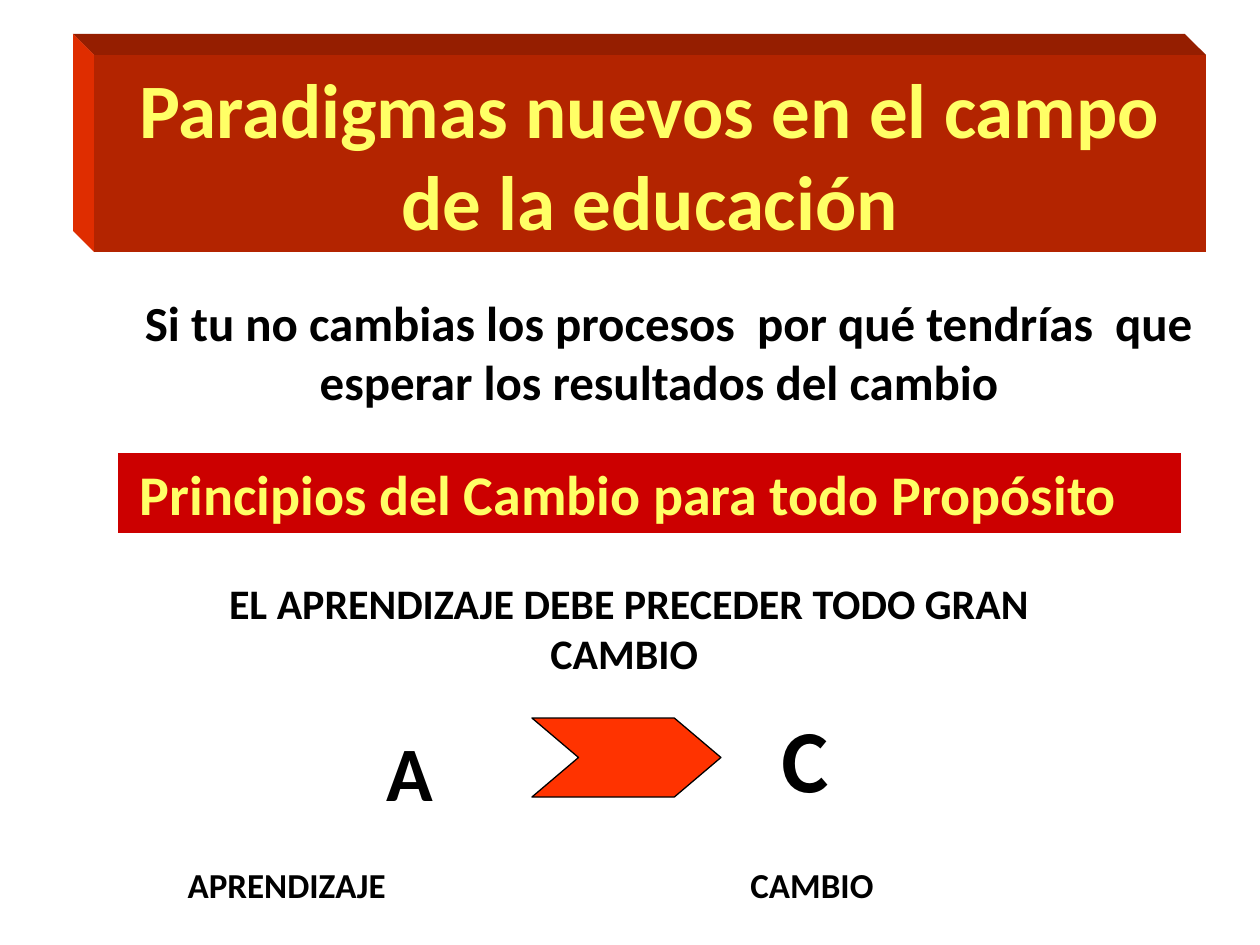
from pptx import Presentation
from pptx.dml.color import RGBColor
from pptx.enum.shapes import MSO_SHAPE
from pptx.enum.text import PP_ALIGN
from pptx.util import Pt

SCALE = 914400 / 126
RECTANGLE = MSO_SHAPE.RECTANGLE
CHEVRON = MSO_SHAPE.CHEVRON
LEFT = PP_ALIGN.LEFT
CENTER = PP_ALIGN.CENTER

BLACK = RGBColor(0x00, 0x00, 0x00)
YELLOW = RGBColor(0xFF, 0xFF, 0x66)
ORANGE = RGBColor(0xFF, 0x33, 0x00)
CRIMSON = RGBColor(0xCC, 0x00, 0x00)
FRONT_FACE = RGBColor(0xB3, 0x24, 0x00)
TOP_FACE = RGBColor(0x95, 0x1E, 0x00)
SIDE_FACE = RGBColor(0xDF, 0x2D, 0x00)


def px(length):
    return round(length * SCALE)


class SlideBuilder:
    font = "Calibri"

    def __init__(self, page):
        self.page = page

    def paint(self, shape, fill, line=None):
        shape.shadow.inherit = False
        shape.fill.solid()
        shape.fill.fore_color.rgb = fill
        if line is None:
            shape.line.fill.background()
        else:
            shape.line.color.rgb = line
            shape.line.width = Pt(0.75)
        return shape

    def shape(self, kind, left, top, width, height, fill, line=None):
        shape = self.page.shapes.add_shape(
            kind, px(left), px(top), px(width), px(height))
        return self.paint(shape, fill, line)

    def face(self, points, fill):
        start, *others = points
        builder = self.page.shapes.build_freeform(*start, scale=SCALE)
        builder.add_line_segments(others, close=True)
        return self.paint(builder.convert_to_shape(), fill)

    def add_spans(self, box, spans, align=LEFT, font=None):
        frame = box.text_frame
        frame.word_wrap = True
        para = frame.paragraphs[0]
        para.alignment = align
        for text, size, color in spans:
            span = para.add_run()
            span.text = text
            span.font.name = font or self.font
            span.font.size = Pt(size)
            span.font.bold = True
            span.font.color.rgb = color

    def text(self, left, top, width, height, spans, align=LEFT, font=None):
        box = self.page.shapes.add_textbox(
            px(left), px(top), px(width), px(height))
        self.add_spans(box, spans, align, font)

    def raised_banner(self, left, top, width, height, depth, spans):
        right, bottom = left + width, top + height
        corner = (left - depth, top - depth)
        self.face([corner, (right - depth, top - depth),
                   (right, top), (left, top)], TOP_FACE)
        self.face([corner, (left, top), (left, bottom),
                   (left - depth, bottom - depth)], SIDE_FACE)
        front = self.shape(RECTANGLE, left, top, width, height, FRONT_FACE)
        self.add_spans(front, spans, CENTER)


def main():
    deck = Presentation()
    deck.slide_width = px(1260)
    deck.slide_height = px(945)
    slide = SlideBuilder(deck.slides.add_slide(deck.slide_layouts[6]))

    slide.raised_banner(94, 55, 1112, 197, 21, [
        ("Paradigmas nuevos en el campo de la educación", 44, YELLOW)])
    slide.text(128, 286, 1081, 131, [
        ("Si tu no cambias los procesos  por qué tendrías  que "
         "esperar los resultados del cambio", 28, BLACK),
        ("  ", 24, BLACK)], CENTER)

    heading = slide.shape(RECTANGLE, 118, 453, 1063, 80, CRIMSON)
    slide.add_spans(heading, [
        (" ", 24, BLACK),
        ("Principios del Cambio para todo Propósito", 32, YELLOW)])
    slide.text(168, 571, 922, 113, [
        ("EL APRENDIZAJE DEBE PRECEDER TODO GRAN CAMBIO ", 24, BLACK)], CENTER)

    arrow = slide.shape(CHEVRON, 532, 718, 189, 79, ORANGE, BLACK)
    arrow.adjustments[0] = 0.59
    slide.text(767, 709, 98, 105, [("C", 44, BLACK)], font="Noto Sans CJK JP")
    slide.text(374, 718, 118, 106, [("A", 44, BLACK)])
    slide.text(168, 857, 348, 54, [
        (" ", 18, BLACK), ("APRENDIZAJE", 20, BLACK)])
    slide.text(738, 857, 258, 54, [("CAMBIO", 20, BLACK)])

    deck.save("out.pptx")


if __name__ == "__main__":
    main()
